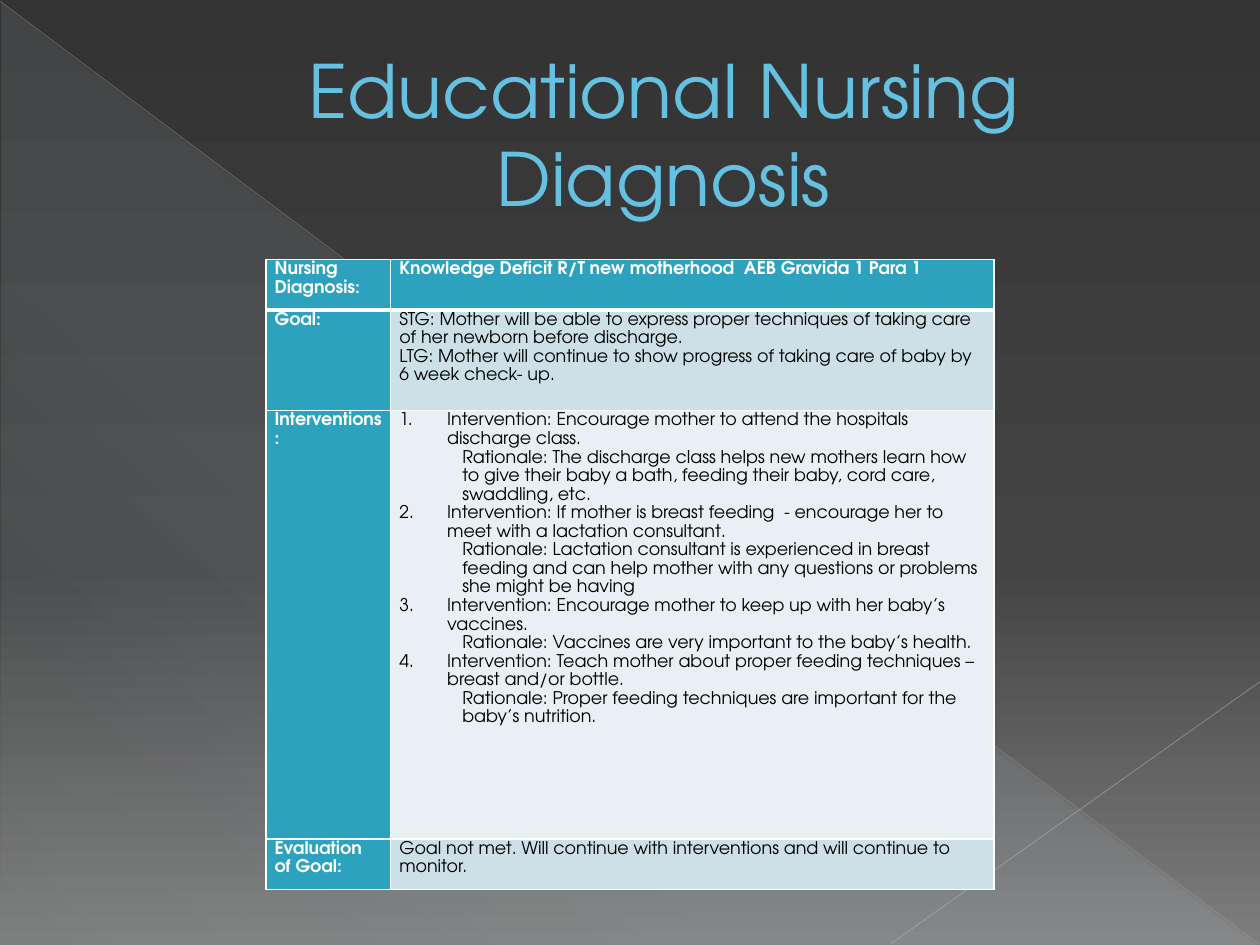
from lxml import etree
from pptx import Presentation
from pptx.dml.color import RGBColor
from pptx.enum.shapes import MSO_CONNECTOR, MSO_SHAPE
from pptx.enum.text import MSO_ANCHOR, PP_ALIGN
from pptx.oxml.ns import qn
from pptx.util import Inches, Pt

FONT = "TeX Gyre Adventor"
WHITE = RGBColor(0xFF, 0xFF, 0xFF)
BLACK = RGBColor(0, 0, 0)
SKY = RGBColor(0x66, 0xC0, 0xE0)
TEAL = RGBColor(0x2D, 0xA2, 0xBF)
BAND_DARK = RGBColor(0xCD, 0xE0, 0xE8)
BAND_LIGHT = RGBColor(0xE8, 0xF0, 0xF4)
MIST = RGBColor(0xDE, 0xF5, 0xFA)
LINE_GRAY = RGBColor(0xB9, 0xB9, 0xB9)
LINE_LIGHT = RGBColor(0xC1, 0xC1, 0xC1)
BACKGROUND = [(0, RGBColor(0x33, 0x33, 0x33), 100),
              (60, RGBColor(0x44, 0x44, 0x44), 100),
              (100, RGBColor(0x7D, 0x7D, 0x7D), 100)]
WEDGE = [(0, MIST, 10), (70, MIST, 8), (100, MIST, 1)]

COL_WIDTHS = [0.99, 4.79]
ROW_HEIGHTS = [0.4, 0.8, 3.4, 0.4]
INTERVENTIONS = [
    ("Intervention: Encourage mother to attend the hospitals discharge class.",
     "Rationale: The discharge class helps new mothers learn how to give their baby "
     "a bath, feeding their baby, cord care, swaddling, etc."),
    ("Intervention: If mother is breast feeding  - encourage her to meet with a "
     "lactation consultant.",
     "Rationale: Lactation consultant is experienced in breast feeding and can help "
     "mother with any questions or problems she might be having"),
    ("Intervention: Encourage mother to keep up with her baby’s vaccines.",
     "Rationale: Vaccines are very important to the baby’s health."),
    ("Intervention: Teach mother about proper feeding techniques – breast and/or bottle.",
     "Rationale: Proper feeding techniques are important for the baby’s nutrition."),
]
CARE_PLAN = [
    (["Nursing", "Diagnosis:"],
     ["Knowledge Deficit R/T new motherhood  AEB Gravida 1 Para 1"]),
    (["Goal:"],
     ["STG: Mother will be able to express proper techniques of taking care of her "
      "newborn before discharge.",
      "LTG: Mother will continue to show progress of taking care of baby by 6 week "
      "check- up."]),
    (["Interventions:"], INTERVENTIONS),
    (["Evaluation of Goal:"],
     ["Goal not met. Will continue with interventions and will continue to monitor."]),
]


def add_color(parent, color, alpha):
    clr = etree.SubElement(parent, qn("a:srgbClr"), val=str(color))
    if alpha < 100:
        etree.SubElement(clr, qn("a:alpha"), val=str(alpha * 1000))


def set_gradient(fill, owner, stops, angle):
    """Fill with (position, colour, opacity) stops; owner is the XML holding the fill."""
    fill.gradient()
    grad = owner.find(".//" + qn("a:gradFill"))
    for child in list(grad):
        grad.remove(child)
    stop_list = etree.SubElement(grad, qn("a:gsLst"))
    for pos, color, alpha in stops:
        add_color(etree.SubElement(stop_list, qn("a:gs"), pos=str(pos * 1000)), color, alpha)
    etree.SubElement(grad, qn("a:lin"), ang=str(angle * 60000), scaled="0")


def add_text(tf, text, size=10, color=BLACK, bold=False, align=PP_ALIGN.LEFT,
             spacing=None, left=0, hanging=0, number=None):
    """Write one paragraph, using the frame's empty first one if it is free."""
    p = tf.paragraphs[0] if not tf.text else tf.add_paragraph()
    p.alignment = align
    p.line_spacing = spacing
    pPr = p._p.get_or_add_pPr()
    pPr.set("marL", str(Inches(left)))
    pPr.set("indent", str(-Inches(hanging)))
    if number:
        etree.SubElement(pPr, qn("a:buFont"), typeface="+mj-lt")
        etree.SubElement(pPr, qn("a:buAutoNum"), type="arabicPeriod", startAt=str(number))
    r = p.add_run()
    r.text = text
    r.font.name, r.font.size, r.font.bold = FONT, Pt(size), bold
    r.font.color.rgb = color


def add_line(s, x1, y1, x2, y2, color, width, alpha):
    line = s.shapes.add_connector(MSO_CONNECTOR.STRAIGHT, Inches(x1), Inches(y1),
                                  Inches(x2), Inches(y2))
    line.line.width = Pt(width)
    line.line.color.rgb = color
    clr = line._element.spPr.find(".//" + qn("a:srgbClr"))
    etree.SubElement(clr, qn("a:alpha"), val=str(alpha * 1000))
    etree.SubElement(line._element.spPr, qn("a:effectLst"))


def add_backdrop(s, x, y, w, h):
    set_gradient(s.background.fill, s._element, BACKGROUND, 90)
    wedge = s.shapes.add_shape(MSO_SHAPE.RIGHT_TRIANGLE, Inches(x + 0.01), Inches(y + 0.02),
                               Inches(w - 0.02), Inches(h - 0.02))
    wedge.shadow.inherit = False
    wedge.line.fill.background()
    set_gradient(wedge.fill, wedge._element.spPr, WEDGE, 133)
    add_line(s, x, y + 0.01, x + w - 0.01, y + h - 0.01, LINE_GRAY, 0.39, 35)
    add_line(s, x + w, y + 5.41, x + 7.07, y + h - 0.01, LINE_LIGHT, 0.47, 45)


def add_title(s, x, y, w, h):
    tf = s.shapes.add_textbox(Inches(x), Inches(y), Inches(w), Inches(h)).text_frame
    tf.word_wrap = True
    tf.vertical_anchor = MSO_ANCHOR.MIDDLE
    add_text(tf, "Educational Nursing Diagnosis", size=42, color=SKY,
             align=PP_ALIGN.CENTER, left=0.53)


def set_borders(cell, **widths):
    tcPr = cell._tc.get_or_add_tcPr()
    for i, side in enumerate("LRTB"):
        ln = etree.Element(qn("a:ln" + side), w=str(Pt(widths.get(side, 1))))
        add_color(etree.SubElement(ln, qn("a:solidFill")), WHITE, 100)
        tcPr.insert(i, ln)


def fill_cell(cell, items, color, bold):
    """Write plain strings, or (intervention, rationale) pairs as a numbered list."""
    fmt = {"color": color, "bold": bold, "spacing": 1.15}
    cell.margin_left = cell.margin_right = Inches(0.07)
    cell.margin_top = cell.margin_bottom = 0
    tf = cell.text_frame
    for number, item in enumerate(items, 1):
        if isinstance(item, str):
            add_text(tf, item, **fmt)
        else:
            intervention, rationale = item
            add_text(tf, intervention, left=0.38, hanging=0.38, number=number, **fmt)
            add_text(tf, rationale, left=0.5, **fmt)


def add_care_plan(s, x, y, w, h):
    table = s.shapes.add_table(len(CARE_PLAN), len(COL_WIDTHS), Inches(x), Inches(y),
                               Inches(w), Inches(h)).table
    table.horz_banding = False
    for col, width in zip(table.columns, COL_WIDTHS):
        col.width = Inches(width)
    for i, (row, height, texts) in enumerate(zip(table.rows, ROW_HEIGHTS, CARE_PLAN)):
        row.height = Inches(height)
        for j, (cell, items) in enumerate(zip(row.cells, texts)):
            heading = i == 0 or j == 0
            fill_cell(cell, items, WHITE if heading else BLACK, heading)
            band = BAND_DARK if i % 2 else BAND_LIGHT
            cell.fill.solid()
            cell.fill.fore_color.rgb = TEAL if heading else band
            set_borders(cell, T=3 if i == 1 else 1, B=3 if i == 0 else 1)


def main():
    prs = Presentation()
    prs.slide_width, prs.slide_height = Inches(10), Inches(7.5)
    s = prs.slides.add_slide(prs.slide_layouts[6])
    add_backdrop(s, 0, 0, 10, 7.5)
    add_title(s, 0.5, 0.29, 9, 1.53)
    add_care_plan(s, 2.11, 2.06, 5.78, 5)
    prs.save("out.pptx")


if __name__ == "__main__":
    main()
